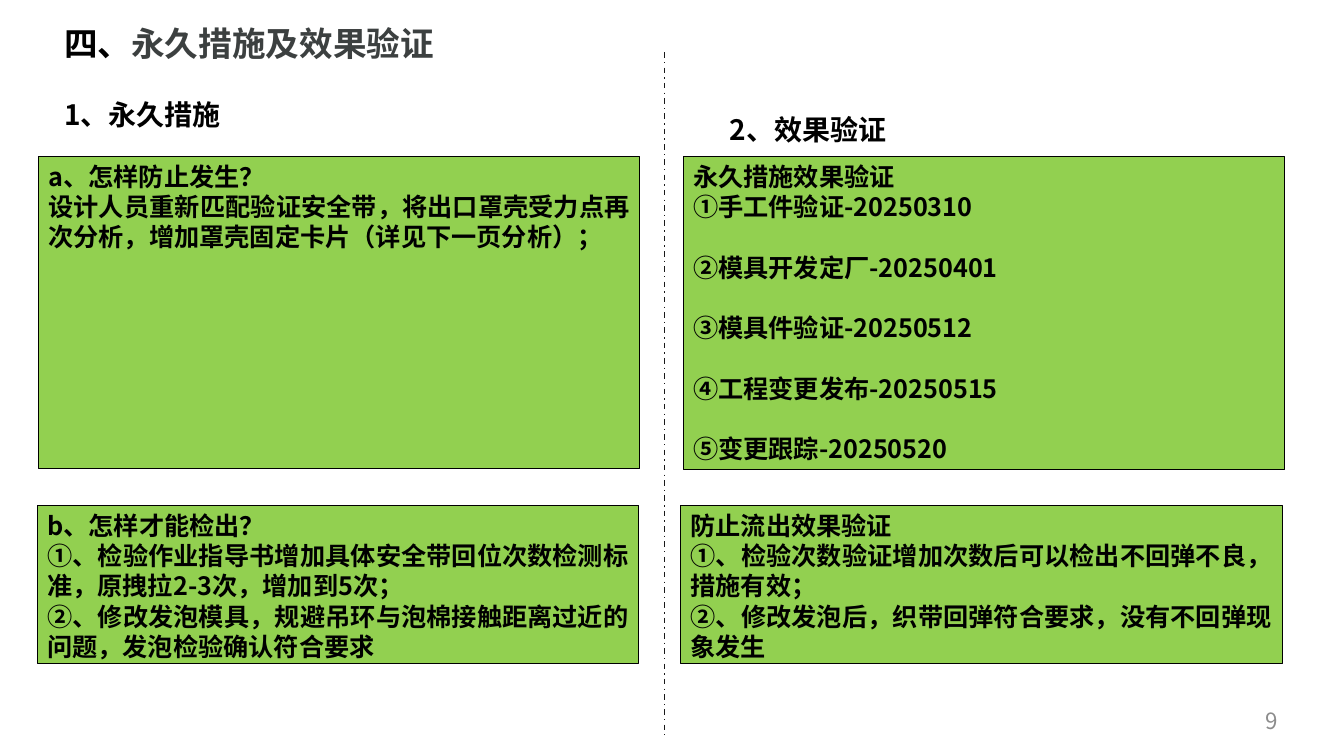
import pptx
import pptx.util
import pptx.dml.color
import pptx.enum.dml
import pptx.enum.shapes
import pptx.enum.text
import pptx.oxml.ns
import lxml.etree

Cm = pptx.util.Cm
Pt = pptx.util.Pt
Align = pptx.enum.text.PP_ALIGN
Anchor = pptx.enum.text.MSO_ANCHOR
FONT = "Noto Sans CJK SC"


def color(value):
    return pptx.dml.color.RGBColor.from_string(value)


def write(shape, paragraphs, size, bold=True, align=Align.LEFT, anchor=Anchor.TOP, gap=0):
    frame = shape.text_frame
    frame.word_wrap = True
    frame.vertical_anchor = anchor
    for index, runs in enumerate(paragraphs):
        paragraph = frame.paragraphs[0] if index == 0 else frame.add_paragraph()
        paragraph.alignment = align
        paragraph.line_spacing = Pt(size * 1.2)
        if index > 1 and gap:
            paragraph.space_before = Pt(gap)
        for text, text_color in runs:
            run = paragraph.add_run()
            run.text = text
            run.font.size = Pt(size)
            run.font.bold = bold
            run.font.name = FONT
            run.font.color.rgb = color(text_color)
            east_asian = lxml.etree.SubElement(run.font._element, pptx.oxml.ns.qn("a:ea"))
            east_asian.set("typeface", FONT)


presentation = pptx.Presentation()
presentation.slide_width = Cm(33.87)
presentation.slide_height = Cm(19.05)
slide = presentation.slides.add_slide(presentation.slide_layouts[6])

title = slide.shapes.add_textbox(Cm(1.37), Cm(0.46), Cm(28.14), Cm(3.33))
write(title, [[("四、", "000000"), ("永久措施及效果验证", "3C4040")]], 24)

page_number = slide.shapes.add_textbox(Cm(24.84), Cm(17.65), Cm(7.62), Cm(1.02))
write(page_number, [[("9", "8C8C8C")]], 16, bold=False, align=Align.RIGHT, anchor=Anchor.MIDDLE)

divider = slide.shapes.add_connector(
    pptx.enum.shapes.MSO_CONNECTOR.STRAIGHT, Cm(16.74), Cm(1.32), Cm(16.74), Cm(18.52))
divider.line.color.rgb = color("191919")
divider.line.width = Pt(1)
divider.line.dash_style = pptx.enum.dml.MSO_LINE.DASH_DOT
lxml.etree.SubElement(divider._element.spPr, pptx.oxml.ns.qn("a:effectLst"))

headings = [
    (1.37, 2.34, "1、永久措施"),
    (18.14, 2.72, "2、效果验证"),
]
for left, top, text in headings:
    heading = slide.shapes.add_textbox(Cm(left), Cm(top), Cm(11.28), Cm(1.12))
    write(heading, [[(text, "000000")]], 20)

panels = [
    (0.97, 3.94, 7.87, 0, [
        "a、怎样防止发生？",
        "设计人员重新匹配验证安全带，将出口罩壳受力点再次分析，增加罩壳固定卡片（详见下一页分析）；",
    ]),
    (0.94, 12.73, 3.99, 0, [
        "b、怎样才能检出？",
        "①、检验作业指导书增加具体安全带回位次数检测标准，原拽拉2-3次，增加到5次；",
        "②、修改发泡模具，规避吊环与泡棉接触距离过近的问题，发泡检验确认符合要求",
    ]),
    (17.15, 12.73, 3.99, 0, [
        "防止流出效果验证",
        "①、检验次数验证增加次数后可以检出不回弹不良，措施有效；",
        "②、修改发泡后，织带回弹符合要求，没有不回弹现象发生",
    ]),
    (17.22, 3.94, 7.9, 21.6, [
        "永久措施效果验证",
        "①手工件验证-20250310",
        "②模具开发定厂-20250401",
        "③模具件验证-20250512",
        "④工程变更发布-20250515",
        "⑤变更跟踪-20250520",
    ]),
]
for left, top, height, gap, lines in panels:
    panel = slide.shapes.add_shape(
        pptx.enum.shapes.MSO_SHAPE.RECTANGLE, Cm(left), Cm(top), Cm(15.16), Cm(height))
    panel.shadow.inherit = False
    panel.fill.solid()
    panel.fill.fore_color.rgb = color("92D050")
    panel.line.color.rgb = color("000000")
    panel.line.width = Pt(0.75)
    write(panel, [[(line, "000000")] for line in lines], 18, align=Align.JUSTIFY, gap=gap)

presentation.save("out.pptx")
